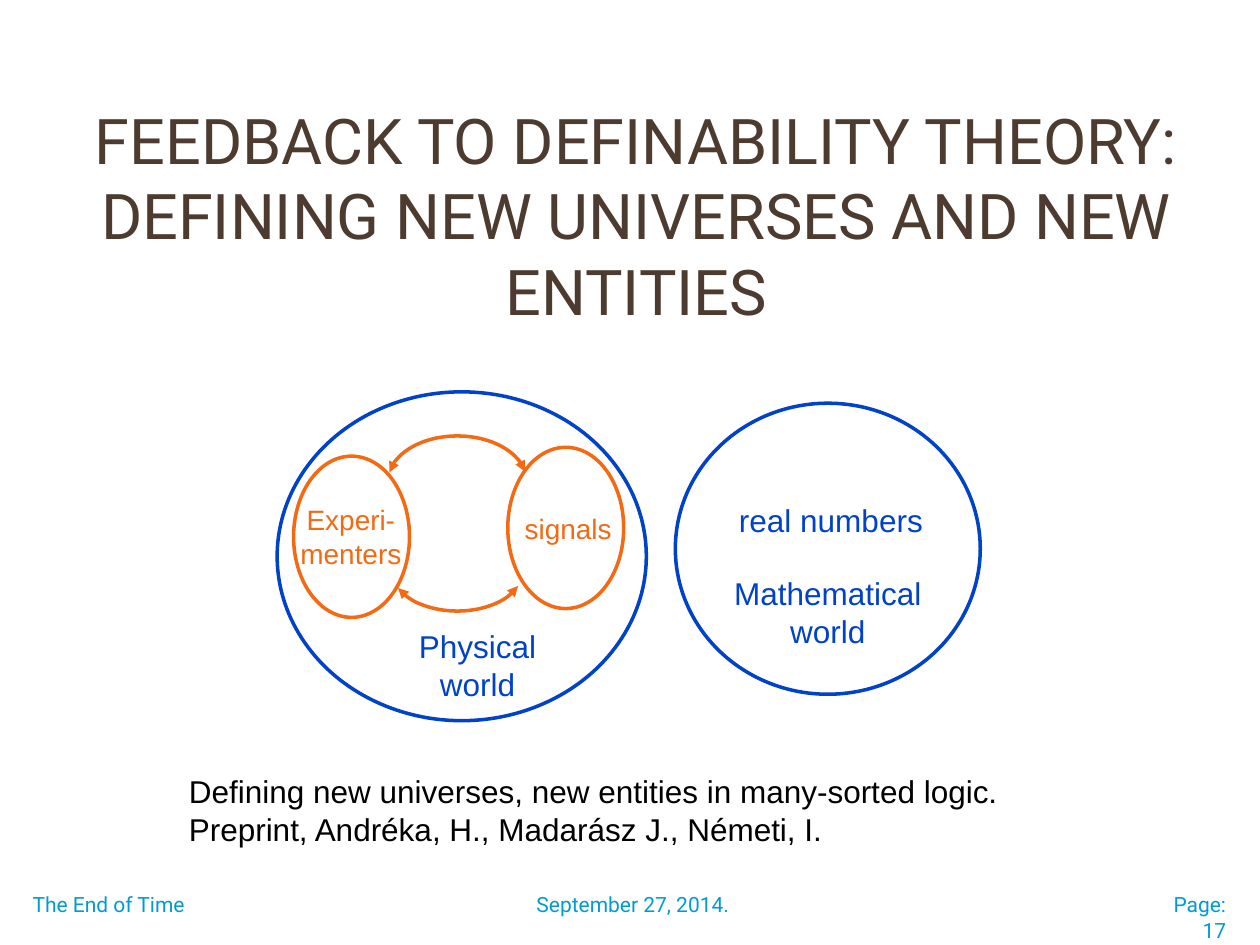
"""Build the slide on defining new universes and new entities."""
from copy import deepcopy

from lxml.etree import SubElement
from pptx import Presentation
from pptx.dml.color import RGBColor
from pptx.enum.shapes import MSO_SHAPE
from pptx.enum.text import MSO_ANCHOR, MSO_AUTO_SIZE, PP_ALIGN
from pptx.oxml.ns import qn
from pptx.util import Inches, Pt

COLORS = {"title": "4E3B30", "footer": "009BD4", "world": "0042C8",
          "entity": "F46914", "source": "000000"}
TITLE = "FEEDBACK TO DEFINABILITY THEORY:\vDEFINING NEW UNIVERSES AND NEW ENTITIES"
TITLE_BOX = (0.62, 0.13, 8.86, 3.15)

FOOTER_TOP, FOOTER_HEIGHT = 7.03, 0.32
FOOTERS = [
    ("The End of Time", 0.16, 3.91, PP_ALIGN.LEFT),
    ("September 27, 2014.", 4.16, 4.43, PP_ALIGN.LEFT),
    ("Page: 17", 9, 0.83, PP_ALIGN.RIGHT),
]
ELLIPSES = [
    ("entity", (2.33, 3.62, 0.92, 1.28)),
    ("entity", (4.03, 3.55, 0.92, 1.28)),
    ("world", (2.2, 3.11, 2.93, 2.61)),
    ("world", (5.36, 3.2, 2.42, 2.31)),
]
ARCS = [
    ((3.08, 3.46, 1.1, 0.72), (187.5, 351.75), False),
    ((3.11, 4.21, 1.04, 0.64), (196.2, 345.9), True),
]
LABELS = [
    (["Physical", "world"], "world", 18, (3.22, 4.93, 1.14, 0.71)),
    (["Experi-", "menters"], "entity", 16, (2.28, 3.94, 1.01, 0.64)),
    (["signals"], "entity", 16, (4.06, 4.01, 0.9, 0.37)),
    (["Mathematical", "world"], "world", 18, (5.72, 4.51, 1.7, 0.71)),
    (["real numbers"], "world", 18, (5.76, 3.93, 1.67, 0.4)),
]
SOURCE = ["Defining new universes, new entities in many-sorted logic.",
          "Preprint, Andréka, H., Madarász J., Németi, I."]
SOURCE_BOX = (1.4, 6.08, 6.75, 0.71)


def inches(box):
    return [Inches(length) for length in box]


def write(frame, lines, color, size, font="Arial", align=PP_ALIGN.LEFT, wrap=False):
    frame.word_wrap = wrap
    frame.auto_size = MSO_AUTO_SIZE.NONE if wrap else MSO_AUTO_SIZE.SHAPE_TO_FIT_TEXT
    frame.text = "\n".join(lines)
    for paragraph in frame.paragraphs:
        paragraph.alignment = align
        for run in paragraph.runs:
            run.font.name = font
            run.font.size = Pt(size)
            run.font.color.rgb = RGBColor.from_string(COLORS[color])


def add_text(slide, lines, box, **style):
    write(slide.shapes.add_textbox(*inches(box)).text_frame, lines, **style)


def add_title(slide):
    title = slide.shapes.title
    title.left, title.top, title.width, title.height = inches(TITLE_BOX)
    title.text_frame.vertical_anchor = MSO_ANCHOR.MIDDLE
    write(title.text_frame, [TITLE], color="title", size=36, font="Roboto",
          align=PP_ALIGN.CENTER, wrap=True)
    run_format = title.element.find(".//" + qn("a:rPr"))
    for line_break in title.element.iter(qn("a:br")):
        line_break.append(deepcopy(run_format))


def add_outline(slide, kind, box, color):
    shape = slide.shapes.add_shape(kind, *inches(box))
    shape.shadow.inherit = False
    shape.fill.background()
    shape.line.color.rgb = RGBColor.from_string(COLORS[color])
    shape.line.width = Pt(2)
    return shape


def add_double_arrow(slide, box, angles, flipped):
    arc = add_outline(slide, MSO_SHAPE.ARC, box, "entity")
    for index, angle in enumerate(angles):
        arc.adjustments[index] = angle * 60000 / 100000
    if flipped:
        arc.element.spPr.find(qn("a:xfrm")).set("flipV", "1")
    line = arc.element.spPr.find(qn("a:ln"))
    for end in ("a:headEnd", "a:tailEnd"):
        SubElement(line, qn(end), type="triangle")


def main():
    presentation = Presentation()
    presentation.slide_width, presentation.slide_height = Inches(10), Inches(7.5)
    slide = presentation.slides.add_slide(presentation.slide_layouts[5])
    add_title(slide)
    for text, left, width, align in FOOTERS:
        add_text(slide, [text], (left, FOOTER_TOP, width, FOOTER_HEIGHT),
                 color="footer", size=12, font="Roboto", align=align, wrap=True)
    for color, box in ELLIPSES:
        add_outline(slide, MSO_SHAPE.OVAL, box, color)
    for box, angles, flipped in ARCS:
        add_double_arrow(slide, box, angles, flipped)
    for lines, color, size, box in LABELS:
        add_text(slide, lines, box, color=color, size=size, align=PP_ALIGN.CENTER)
    add_text(slide, SOURCE, SOURCE_BOX, color="source", size=18)
    presentation.save("out.pptx")


if __name__ == "__main__":
    main()
